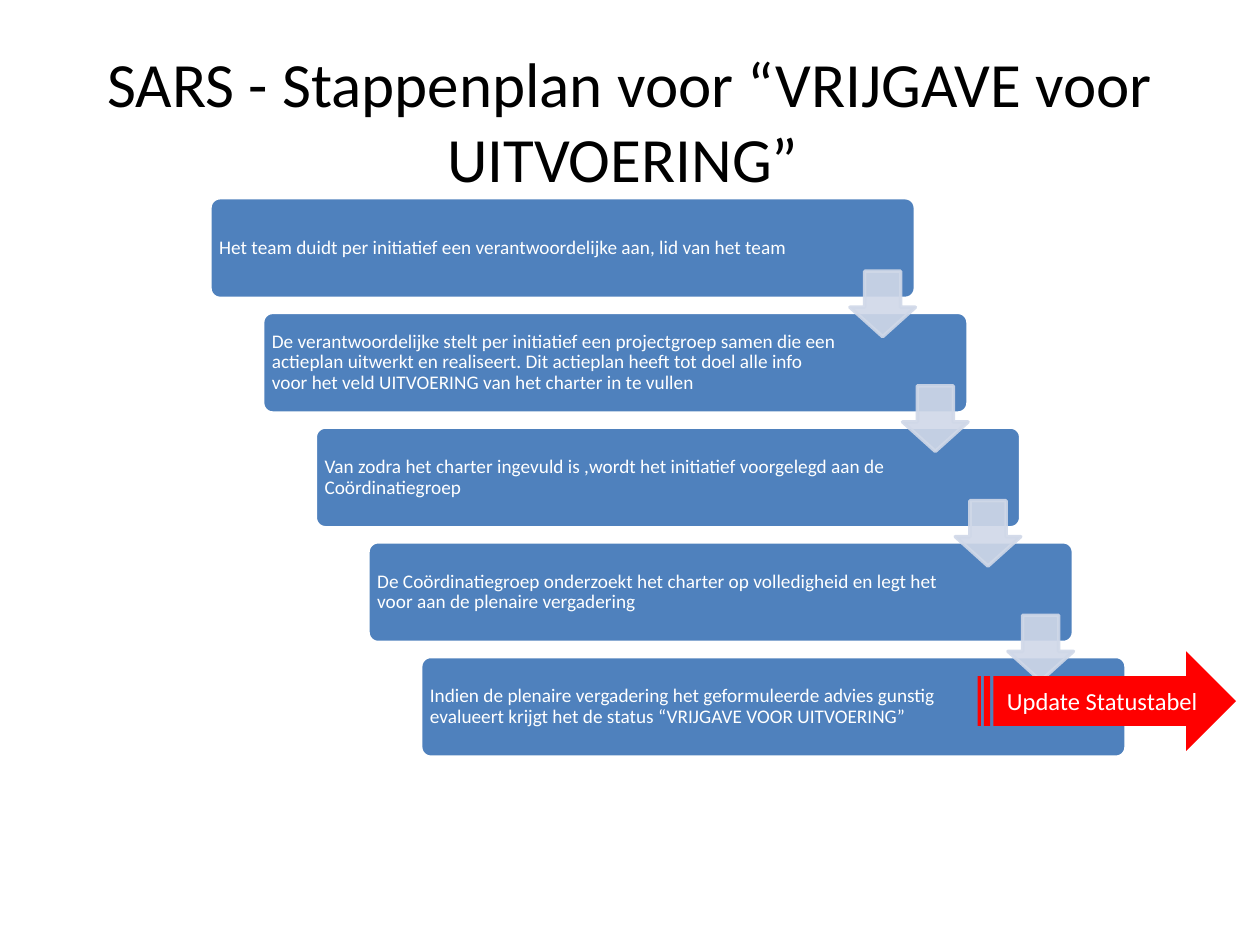
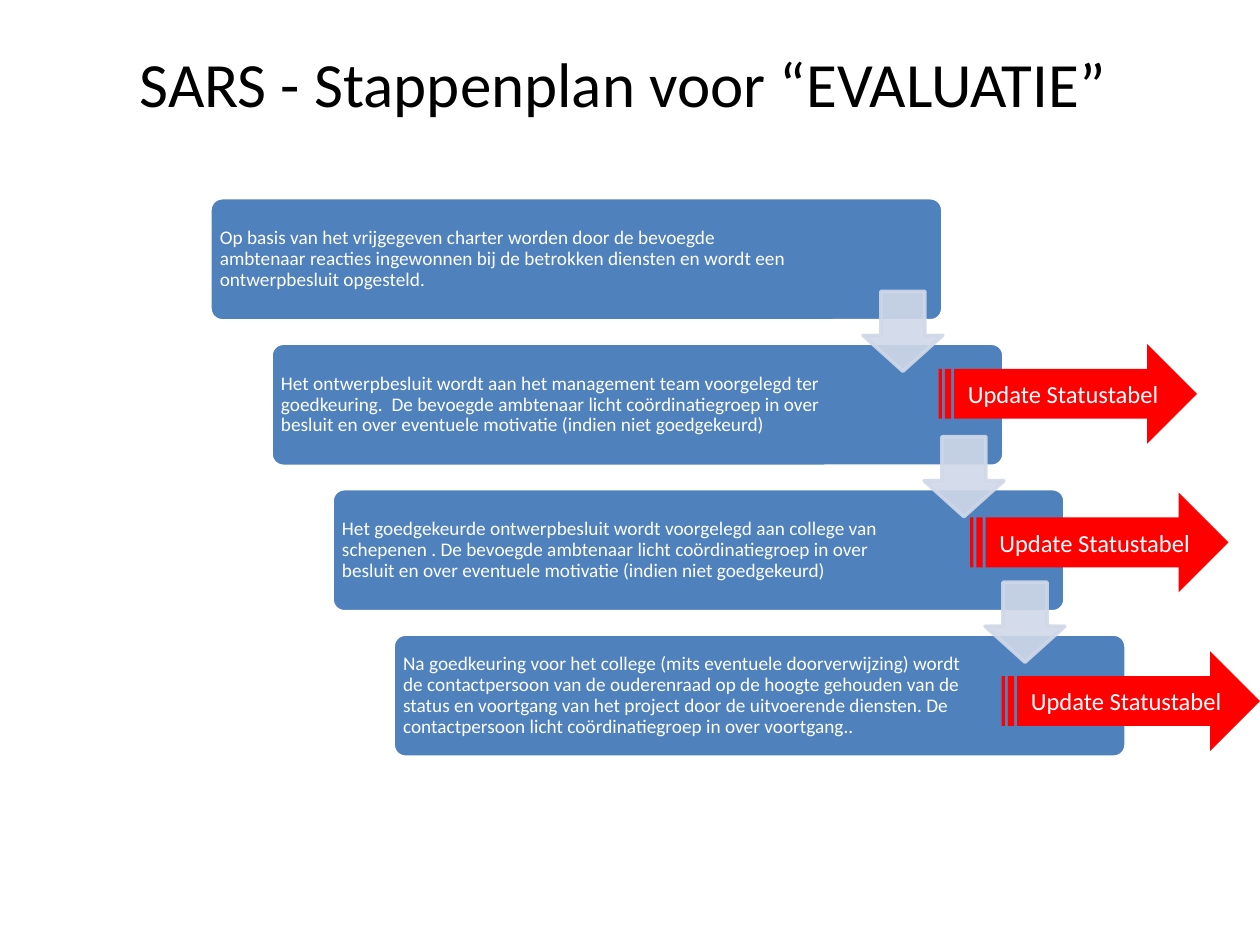
import pptx
import pptx.dml.color
import pptx.enum.shapes
import pptx.enum.text
import pptx.oxml.ns
import pptx.util
from lxml import etree

Pt = pptx.util.Pt
SHAPES = pptx.enum.shapes.MSO_SHAPE
ALIGN = pptx.enum.text.PP_ALIGN
ANCHOR = pptx.enum.text.MSO_ANCHOR

# Content: steps from top to bottom, red status arrows by left and top
STATUS_LABEL = "Update Statustabel"
PLANS = [
    {
        "title": "SARS - Stappenplan voor “VRIJGAVE voor UITVOERING” ",
        "steps": [
            "Het team duidt per initiatief een verantwoordelijke aan, lid van het team",
            "De verantwoordelijke stelt per initiatief een projectgroep samen die een "
            "actieplan uitwerkt en realiseert. Dit actieplan heeft tot doel alle info "
            "voor het veld UITVOERING van het charter in te vullen",
            "Van zodra het charter ingevuld is ,wordt het initiatief voorgelegd aan de "
            "Coördinatiegroep",
            "De Coördinatiegroep onderzoekt het charter op volledigheid en legt het "
            "voor aan de plenaire vergadering",
            "Indien de plenaire vergadering het geformuleerde advies gunstig "
            "evalueert krijgt het de status “VRIJGAVE VOOR UITVOERING”",
        ],
        "box_share": (0.77, 0.18),
        "arrow_drop": 0.73,
        "status_arrows": [(558.7, 372.2)],
    },
    {
        "title": "SARS - Stappenplan voor “EVALUATIE” ",
        "steps": [
            "Op basis van het vrijgegeven charter worden door de bevoegde "
            "ambtenaar reacties ingewonnen bij de betrokken diensten en wordt een "
            "ontwerpbesluit opgesteld.",
            "Het ontwerpbesluit wordt aan het management team voorgelegd ter "
            "goedkeuring.  De bevoegde ambtenaar licht coördinatiegroep in over "
            "besluit en over eventuele motivatie (indien niet goedgekeurd)",
            "Het goedgekeurde ontwerpbesluit wordt voorgelegd aan college van "
            "schepenen . De bevoegde ambtenaar licht coördinatiegroep in over "
            "besluit en over eventuele motivatie (indien niet goedgekeurd)",
            "Na goedkeuring voor het college (mits eventuele doorverwijzing) wordt "
            "de contactpersoon van de ouderenraad op de hoogte gehouden van de "
            "status en voortgang van het project door de uitvoerende diensten. De "
            "contactpersoon licht coördinatiegroep in over voortgang..",
        ],
        "box_share": (0.8, 0.22),
        "arrow_drop": 0.76,
        "status_arrows": [(536.4, 196.6), (554.4, 281.5), (572.4, 372.2)],
    },
]

# Shared style and layout, in points
FONT = "Calibri"
BLACK, WHITE, BLUE, PALE, RED = "000000", "FFFFFF", "4F81BD", "D0D8E8", "FF0000"
STAIR = (120, 113, 523.5, 319.7)
TITLE = (36, 21.6, 648, 90)
STATUS_SIZE = (147.6, 56.9)
MARGIN = 3.6


def color(hex_code):
    return pptx.dml.color.RGBColor.from_string(hex_code)


def fade(fill, percent):
    rgb = fill._xPr.find(".//" + pptx.oxml.ns.qn("a:srgbClr"))
    etree.SubElement(rgb, pptx.oxml.ns.qn("a:alpha"), val=str(percent * 1000))


def write(frame, text, size, hex_code, align):
    frame.word_wrap = True
    frame.text = text
    para = frame.paragraphs[0]
    para.alignment = align
    for span in para.runs:
        span.font.name = FONT
        span.font.size = Pt(size)
        span.font.color.rgb = color(hex_code)
    return para


def add_shape(page, kind, place, fill, line=None):
    shape = page.shapes.add_shape(kind, *map(Pt, place))
    shape.shadow.inherit = False
    shape.fill.solid()
    shape.fill.fore_color.rgb = color(fill)
    if line:
        shape.line.color.rgb = color(line)
        shape.line.width = Pt(2)
    else:
        shape.line.fill.background()
    return shape


def add_step(page, place, text, right_margin):
    box = add_shape(page, SHAPES.ROUNDED_RECTANGLE, place, BLUE, WHITE)
    box.adjustments[0] = 0.1
    frame = box.text_frame
    frame.margin_left = frame.margin_top = frame.margin_bottom = Pt(MARGIN)
    frame.margin_right = Pt(right_margin)
    frame.vertical_anchor = ANCHOR.MIDDLE
    write(frame, text, 11, WHITE, ALIGN.LEFT).line_spacing = 0.9


def add_down_arrow(page, left, top, side):
    arrow = add_shape(page, SHAPES.DOWN_ARROW, (left, top, side, side), PALE, PALE)
    arrow.adjustments[0] = 0.55
    arrow.adjustments[1] = 0.45
    fade(arrow.fill, 90)
    fade(arrow.line.fill, 90)


def add_staircase(page, plan):
    left, top, width, height = STAIR
    steps = plan["steps"]
    box_width, box_height = width * plan["box_share"][0], height * plan["box_share"][1]
    shift = (width - box_width) / (len(steps) - 1)
    drop = (height - box_height) / (len(steps) - 1)
    side = 0.65 * box_height
    corners = [(left + i * shift, top + i * drop) for i in range(len(steps))]

    for (x, y), text in zip(corners, steps):
        add_step(page, (x, y, box_width, box_height), text, MARGIN + side + shift)
    for x, y in corners[:-1]:
        add_down_arrow(page, x + box_width - side, y + plan["arrow_drop"] * box_height, side)


def build_page(deck, plan):
    page = deck.slides.add_slide(deck.slide_layouts[6])
    add_staircase(page, plan)

    # Title
    title = page.shapes.add_textbox(*map(Pt, TITLE))
    write(title.text_frame, plan["title"], 36, BLACK, ALIGN.CENTER)

    # Status arrows
    for corner in plan["status_arrows"]:
        arrow = add_shape(page, SHAPES.STRIPED_RIGHT_ARROW, corner + STATUS_SIZE, RED)
        arrow.text_frame.vertical_anchor = ANCHOR.MIDDLE
        write(arrow.text_frame, STATUS_LABEL, 14, WHITE, ALIGN.CENTER)


def main():
    deck = pptx.Presentation()
    deck.slide_width, deck.slide_height = Pt(720), Pt(540)
    for plan in PLANS:
        build_page(deck, plan)
    deck.save("out.pptx")


if __name__ == "__main__":
    main()
